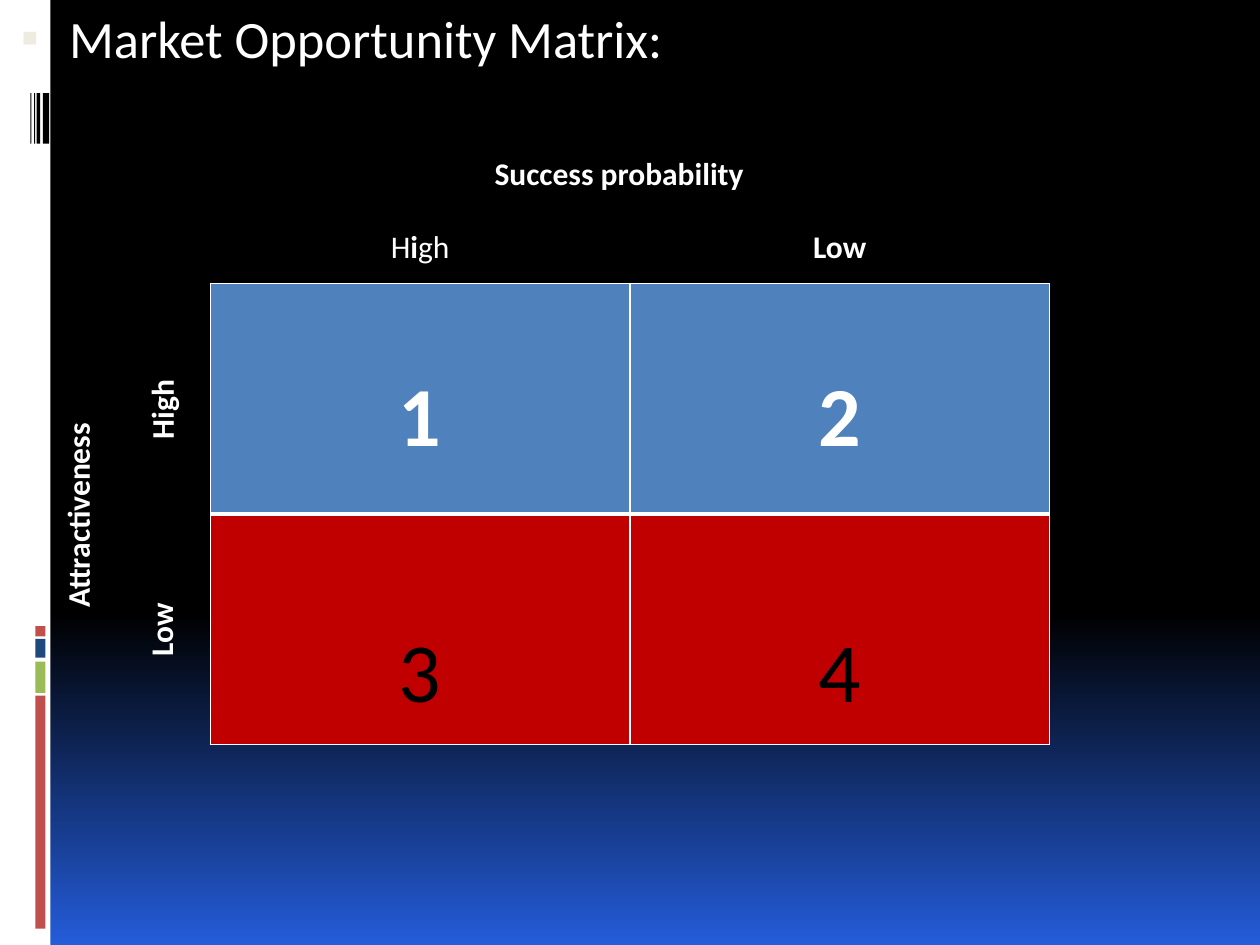
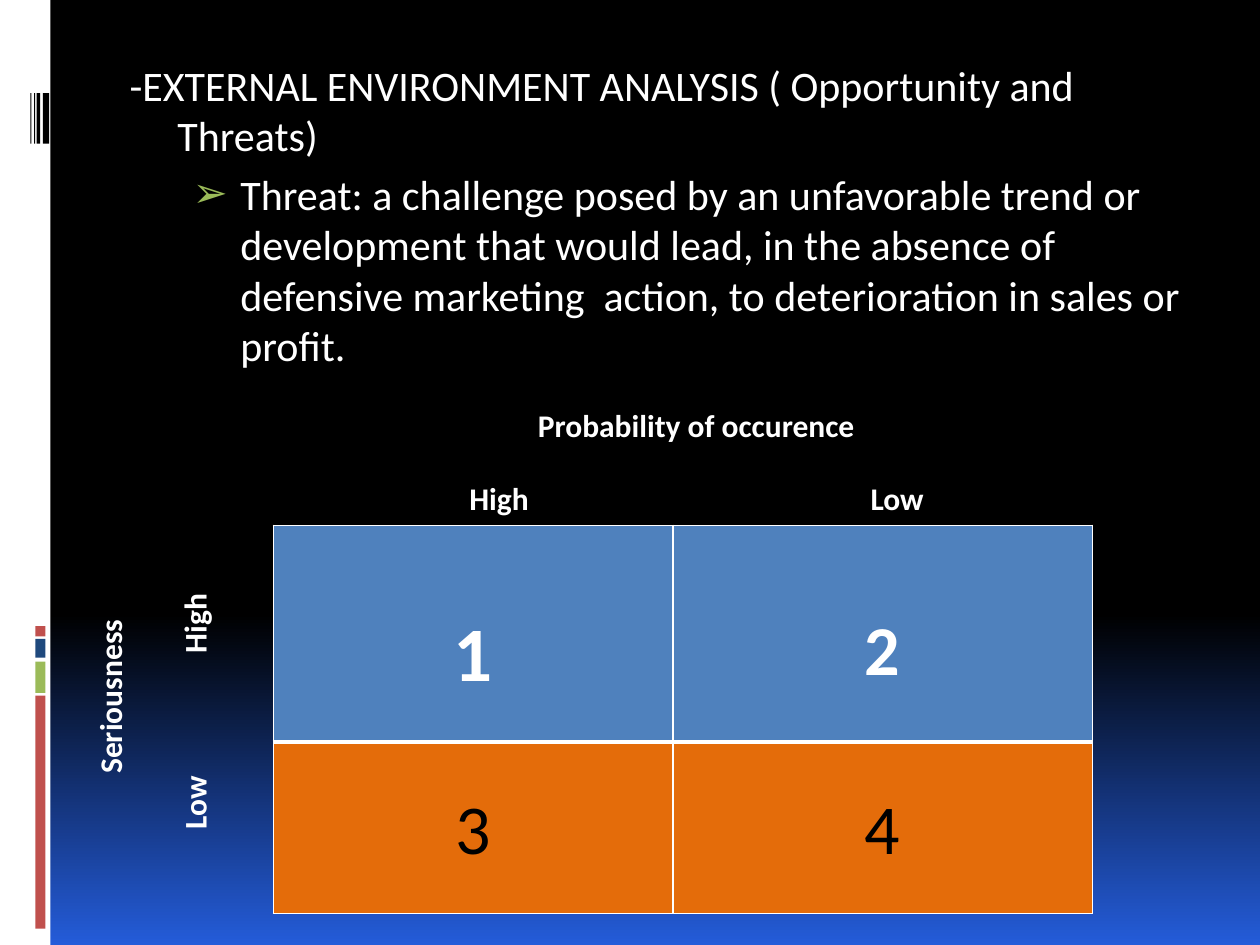
from copy import deepcopy
from pptx import Presentation
from pptx.dml.color import RGBColor
from pptx.enum.shapes import MSO_SHAPE
from pptx.enum.text import PP_ALIGN
from pptx.oxml import parse_xml
from pptx.oxml.ns import nsdecls, qn
from pptx.util import Inches, Pt

FONT = "Calibri"
WHITE, BLACK, BLUE = "FFFFFF", "000000", "4F81BD"
RED, GREEN, NAVY = "C0504D", "9BBB59", "1F497D"
GRADIENT = [(0, BLACK), (0.65, BLACK), (1, "245CD9")]
SIDE_BAND = (0, 0, 0.4, 7.5, WHITE)
COLOUR_BARS = [(5.52, 1.85, RED), (5.25, 0.25, GREEN), (5.07, 0.15, NAVY), (4.97, 0.08, RED)]
BARCODE = [(0.34, 0.05), (0.29, 0.03), (0.27, 0.01), (0.24, 0.01)]

SLIDES = [
    {
        "body": {
            "box": (0, 0, 9, 6.37),
            "paragraphs": [
                {"text": "Market Opportunity Matrix:", "size": 30, "indent": 0.45,
                 "before": 7, "bullet": ("▪", "EEECE1", 95)},
            ],
        },
        "matrix": {
            "at": (1.67, 2.25), "columns": [3.33, 3.33], "rows": [1.83, 1.83],
            "fills": [BLUE, "C00000"], "top_margins": [0.66, 0.86],
            "cells": [[("1", 48), ("2", 48)], [("3", 48), ("4", 48)]],
        },
        "label_height": 0.42,
        "labels": [
            ([("Success probability", True)], 3.75, 1.17, 2.33, 0),
            ([("H", False), ("i", True), ("gh", False)], 2.17, 1.75, 2.33, 0),
            ([("Low", True)], 5.5, 1.75, 2.33, 0),
            ([("Attractiveness", True)], -0.54, 3.88, 2.33, 270),
            ([("Low", True)], 0.12, 4.79, 2.33, 270),
            ([("High", True)], 0.54, 3.04, 1.5, 270),
        ],
    },
    {
        "body": {
            "box": (0.5, 0.42, 9, 6.28),
            "paragraphs": [
                {"text": "-EXTERNAL ENVIRONMENT ANALYSIS ( Opportunity and Threats)",
                 "size": 24, "indent": 0.81, "before": 4.8},
                {"text": "Threat: a challenge posed by an unfavorable trend or development "
                         "that would lead, in the absence of defensive marketing  action, "
                         "to deterioration in sales or profit.",
                 "size": 24, "indent": 1.31, "before": 4.8, "bullet": ("➢", GREEN, 100)},
            ],
        },
        "matrix": {
            "at": (2.17, 4.17), "columns": [3.17, 3.33], "rows": [1.72, 1.36],
            "fills": [BLUE, "E46C0A"], "top_margins": [0.66, 0.36],
            "cells": [[("1", 44), ("2", 40)], [("3", 40), ("4", 40)]],
        },
        "label_height": 0.4,
        "labels": [
            ([("Probability of occurence", True)], 4.17, 3.17, 3.08, None),
            ([("High", True)], 2.42, 3.75, 3.08, 0),
            ([("Low", True)], 5.58, 3.75, 3.08, 0),
            ([("Seriousness", True)], -0.67, 5.33, 3.08, 270),
            ([("High", True)], 0, 4.75, 3.08, 270),
            ([("Low", True)], 0, 6.17, 3.08, 270),
        ],
    },
]


def colour(value):
    return RGBColor.from_string(value)


def add_run(paragraph, text, size, text_colour=WHITE, bold=False):
    run = paragraph.add_run()
    run.text = text
    run.font.name = FONT
    run.font.size = Pt(size)
    run.font.bold = bold
    run.font.color.rgb = colour(text_colour)


def add_bar(slide, left, top, width, height, fill):
    shape = slide.shapes.add_shape(MSO_SHAPE.RECTANGLE, *map(Inches, (left, top, width, height)))
    shape.shadow.inherit = False
    shape.fill.solid()
    shape.fill.fore_color.rgb = colour(fill)
    shape.line.fill.background()


def decorate(slide):
    fill = slide.background.fill
    fill.gradient()
    fill.gradient_angle = 270
    stop_list = slide.element.find(".//" + qn("a:gsLst"))
    stop_list.insert(1, deepcopy(stop_list[0]))
    for stop, (position, value) in zip(fill.gradient_stops, GRADIENT):
        stop.position = position
        stop.color.rgb = colour(value)
    add_bar(slide, *SIDE_BAND)
    for top, height, value in COLOUR_BARS:
        add_bar(slide, 0.28, top, 0.08, height, value)
    for left, width in BARCODE:
        add_bar(slide, left, 0.74, width, 0.4, BLACK)


def add_text_frame(slide, left, top, width, height, rotation=0):
    box = slide.shapes.add_textbox(*map(Inches, (left, top, width, height)))
    box.rotation = rotation
    box.text_frame.word_wrap = True
    return box.text_frame


def add_bullet(properties, symbol, value, percent):
    for tag in (f'<a:buClr {nsdecls("a")}><a:srgbClr val="{value}"/></a:buClr>',
                f'<a:buSzPct {nsdecls("a")} val="{percent * 1000}"/>',
                f'<a:buFont {nsdecls("a")} typeface="{FONT}"/>',
                f'<a:buChar {nsdecls("a")} char="{symbol}"/>'):
        properties.append(parse_xml(tag))


def add_body(slide, body):
    frame = add_text_frame(slide, *body["box"])
    for index, item in enumerate(body["paragraphs"]):
        paragraph = frame.add_paragraph() if index else frame.paragraphs[0]
        paragraph.space_before = Pt(item["before"])
        add_run(paragraph, item["text"], item["size"])
        properties = paragraph._p.get_or_add_pPr()
        properties.set("marL", str(Inches(item["indent"])))
        properties.set("indent", str(Inches(-0.38)))
        if "bullet" in item:
            add_bullet(properties, *item["bullet"])


def add_borders(cell, widths):
    properties = cell._tc.get_or_add_tcPr()
    for side, width in widths.items():
        properties.append(parse_xml(
            f'<a:ln{side} {nsdecls("a")} w="{Pt(width)}"><a:solidFill>'
            f'<a:srgbClr val="{WHITE}"/></a:solidFill></a:ln{side}>'))


def add_matrix(slide, matrix):
    columns, rows = matrix["columns"], matrix["rows"]
    position = map(Inches, (*matrix["at"], sum(columns), sum(rows)))
    table = slide.shapes.add_table(len(rows), len(columns), *position).table
    table.first_row = table.horz_banding = False
    for column, width in zip(table.columns, columns):
        column.width = Inches(width)
    for row_index, row in enumerate(table.rows):
        row.height = Inches(rows[row_index])
        upper = row_index == 0
        for cell, (digit, size) in zip(row.cells, matrix["cells"][row_index]):
            add_borders(cell, {"L": 1, "R": 1, "T": 1 if upper else 3, "B": 3 if upper else 1})
            cell.fill.solid()
            cell.fill.fore_color.rgb = colour(matrix["fills"][row_index])
            cell.margin_top = Inches(matrix["top_margins"][row_index])
            paragraph = cell.text_frame.paragraphs[0]
            paragraph.alignment = PP_ALIGN.CENTER
            add_run(paragraph, digit, size, WHITE if upper else BLACK, upper)


def add_label(slide, height, runs, left, top, width, rotation):
    frame = add_text_frame(slide, left, top, width, height, rotation or 0)
    paragraph = frame.paragraphs[0]
    paragraph.alignment = PP_ALIGN.LEFT if rotation is None else PP_ALIGN.CENTER
    for text, bold in runs:
        add_run(paragraph, text, 18, bold=bold)


def main():
    presentation = Presentation()
    presentation.slide_width, presentation.slide_height = Inches(10), Inches(7.5)
    for content in SLIDES:
        slide = presentation.slides.add_slide(presentation.slide_layouts[6])
        decorate(slide)
        add_body(slide, content["body"])
        add_matrix(slide, content["matrix"])
        for label in content["labels"]:
            add_label(slide, content["label_height"], *label)
    presentation.save("out.pptx")


if __name__ == "__main__":
    main()
